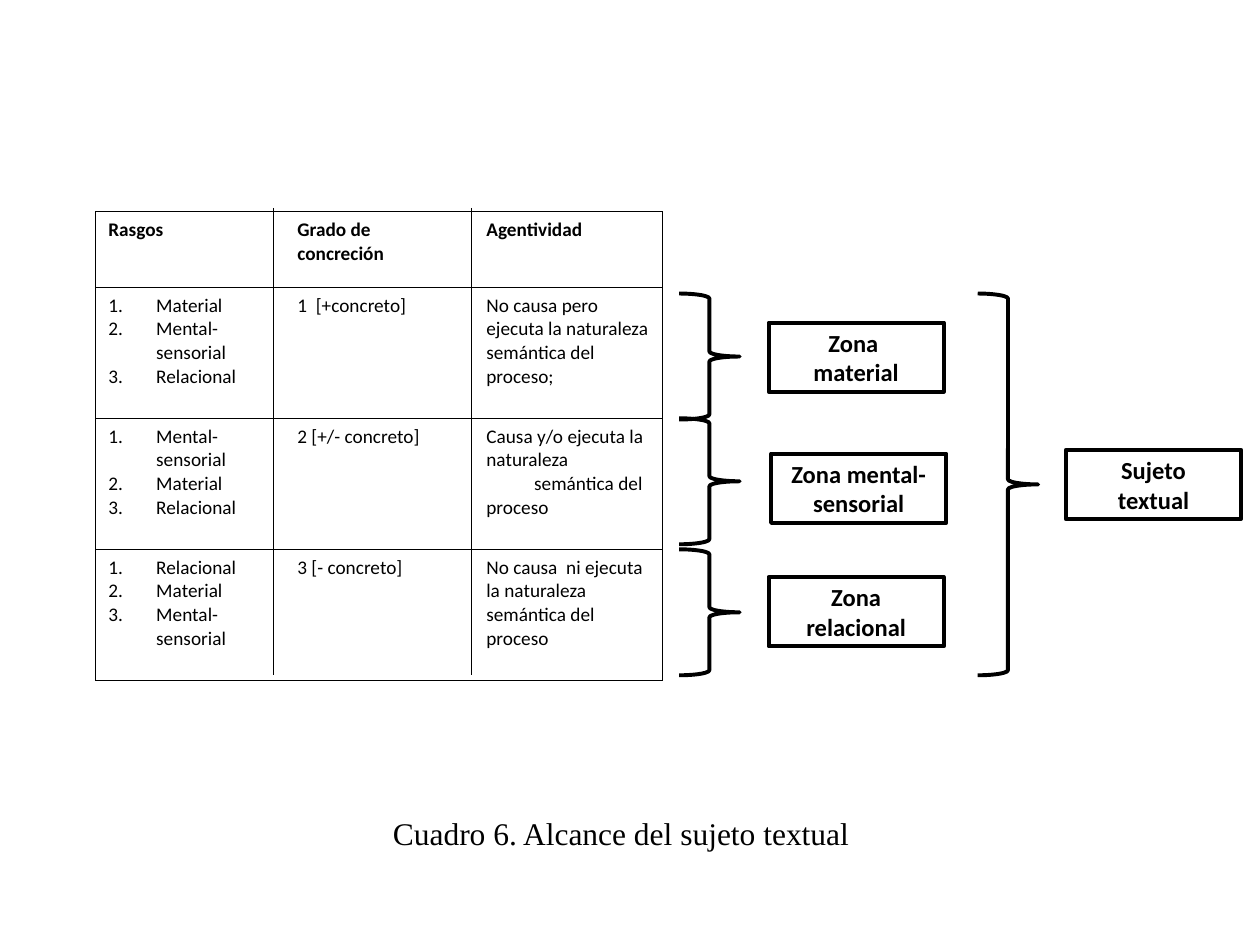
from lxml.etree import SubElement
from pptx import Presentation
from pptx.dml.color import RGBColor
from pptx.enum.shapes import MSO_CONNECTOR, MSO_SHAPE
from pptx.enum.text import MSO_ANCHOR, MSO_AUTO_SIZE, PP_ALIGN
from pptx.oxml.ns import qn
from pptx.util import Inches, Pt

BLACK = RGBColor(0, 0, 0)
WHITE = RGBColor(255, 255, 255)

TABLE_LEFT, TABLE_TOP = 0.76, 1.68
COLUMN_WIDTH = 1.5
HEADER_HEIGHT, ROW_HEIGHT = 0.6, 1.04
BRACE_WIDTH = 0.48
BOX_WIDTH, BOX_HEIGHT = 1.39, 0.55

HEADER_FONT = {"name": "Calibri", "size": Pt(11), "bold": True}
BODY_FONT = {**HEADER_FONT, "bold": False}
BOX_FONT = {**HEADER_FONT, "size": Pt(14)}
CAPTION_FONT = {"name": "Times New Roman", "size": Pt(18), "bold": False}

HEADERS = ["Rasgos", "Grado de concreción", "Agentividad"]
# Ranked traits, degree of concreteness, agentivity
ROWS = [
    (["Material", "Mental-sensorial", "Relacional"],
     ["1  [+concreto]"],
     ["No causa pero ejecuta la naturaleza semántica del proceso;"]),
    (["Mental-sensorial", "Material", "Relacional"],
     ["2 [+/- concreto]"],
     ["Causa y/o ejecuta la", "naturaleza semántica del", "proceso"]),
    (["Relacional", "Material", "Mental-sensorial"],
     ["3 [- concreto]"],
     ["No causa  ni ejecuta la naturaleza semántica del proceso"]),
]


def write_lines(frame, lines, font_format, align=PP_ALIGN.LEFT):
    for index, line in enumerate(lines):
        paragraph = frame.paragraphs[0] if index == 0 else frame.add_paragraph()
        paragraph.alignment = align
        run = paragraph.add_run()
        run.text = line
        for name, value in font_format.items():
            setattr(run.font, name, value)
        run.font.color.rgb = BLACK


def hang_lines(frame, numbered):
    for paragraph in frame.paragraphs:
        properties = paragraph._p.get_or_add_pPr()
        properties.set("marL", str(Inches(0.38)))
        properties.set("indent", str(-Inches(0.38)))
        if numbered:
            SubElement(properties, qn("a:buAutoNum"), type="arabicPeriod")


def set_borders(cell, visible_sides):
    properties = cell._tc.get_or_add_tcPr()
    for position, side in enumerate("LRTB"):
        border = properties.makeelement(qn(f"a:ln{side}"), {"w": str(Pt(0.5))})
        if side in visible_sides:
            fill = SubElement(border, qn("a:solidFill"))
            SubElement(fill, qn("a:srgbClr"), val=str(BLACK))
        else:
            SubElement(border, qn("a:noFill"))
        properties.insert(position, border)


def add_traits_table(slide):
    row_count, column_count = len(ROWS) + 1, len(HEADERS)
    table = slide.shapes.add_table(
        row_count, column_count, Inches(TABLE_LEFT), Inches(TABLE_TOP),
        Inches(COLUMN_WIDTH * column_count),
        Inches(HEADER_HEIGHT + ROW_HEIGHT * len(ROWS))).table
    table.first_row = table.horz_banding = False
    for column in table.columns:
        column.width = Inches(COLUMN_WIDTH)

    contents = [[[header] for header in HEADERS], *ROWS]
    for row_index, row in enumerate(contents):
        is_header = row_index == 0
        table.rows[row_index].height = Inches(HEADER_HEIGHT if is_header else ROW_HEIGHT)
        for column_index, lines in enumerate(row):
            cell = table.cell(row_index, column_index)
            write_lines(cell.text_frame, lines, HEADER_FONT if is_header else BODY_FONT)
            is_ranking = column_index == 0 and not is_header
            if is_ranking or len(lines) > 1:
                hang_lines(cell.text_frame, is_ranking)
            cell.fill.solid()
            cell.fill.fore_color.rgb = WHITE
            set_borders(cell, "TB" + {0: "L", column_count - 1: "R"}.get(column_index, ""))


def add_column_rule(slide, x):
    rule = slide.shapes.add_connector(
        MSO_CONNECTOR.STRAIGHT, Inches(x), Inches(1.65), Inches(x), Inches(5.36))
    rule.line.color.rgb = BLACK
    rule.line.width = Pt(0.5)
    SubElement(rule._element.spPr, qn("a:effectLst"))


def add_outlined(slide, kind, left, top, width, height):
    outlined = slide.shapes.add_shape(
        kind, Inches(left), Inches(top), Inches(width), Inches(height))
    outlined.shadow.inherit = False
    outlined.line.color.rgb = BLACK
    outlined.line.width = Pt(2.25)
    return outlined


def add_brace(slide, left, top, height):
    brace = add_outlined(slide, MSO_SHAPE.RIGHT_BRACE, left, top, BRACE_WIDTH, height)
    brace.fill.background()


def add_label_box(slide, left, top, lines):
    box = add_outlined(slide, MSO_SHAPE.RECTANGLE, left, top, BOX_WIDTH, BOX_HEIGHT)
    box.fill.solid()
    box.fill.fore_color.rgb = WHITE
    box.text_frame.word_wrap = True
    box.text_frame.vertical_anchor = MSO_ANCHOR.MIDDLE
    write_lines(box.text_frame, lines, BOX_FONT, PP_ALIGN.CENTER)


def add_caption(slide, text):
    frame = slide.shapes.add_textbox(
        Inches(3), Inches(6.41), Inches(3.86), Inches(0.4)).text_frame
    frame.word_wrap = False
    frame.auto_size = MSO_AUTO_SIZE.SHAPE_TO_FIT_TEXT
    write_lines(frame, [text], CAPTION_FONT, PP_ALIGN.CENTER)


def main():
    presentation = Presentation()
    presentation.slide_width, presentation.slide_height = Inches(10), Inches(7.5)
    slide = presentation.slides.add_slide(presentation.slide_layouts[6])

    # Table with its column rules
    add_traits_table(slide)
    for x in (2.17, 3.74):
        add_column_rule(slide, x)

    # One zone for each table row
    for top in (2.33, 3.32, 4.36):
        add_brace(slide, 5.39, top, 1)
    for left, top, lines in [
        (6.1, 2.56, ["Zona ", "material"]),
        (6.12, 3.6, ["Zona mental- sensorial"]),
        (6.1, 4.58, ["Zona relacional"]),
    ]:
        add_label_box(slide, left, top, lines)

    # The zones together form the textual subject
    add_brace(slide, 7.76, 2.33, 3.03)
    add_label_box(slide, 8.46, 3.57, ["Sujeto", "textual"])

    add_caption(slide, "Cuadro 6. Alcance del sujeto textual")
    presentation.save("out.pptx")


if __name__ == "__main__":
    main()
